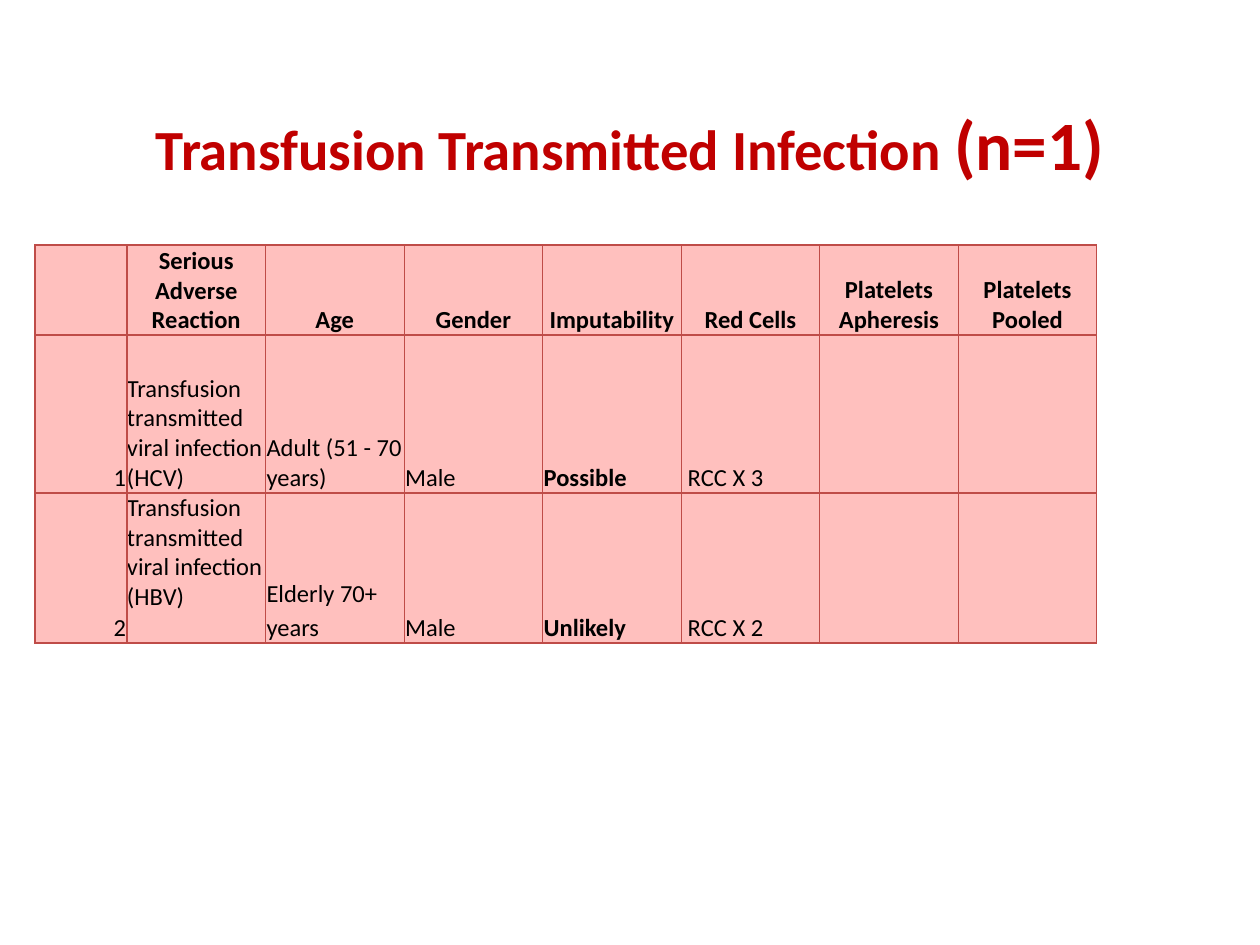
from dataclasses import dataclass
from typing import Any

from lxml.etree import SubElement
from pptx import Presentation
from pptx.dml.color import RGBColor
from pptx.enum.text import MSO_ANCHOR as Anchor, PP_ALIGN as Align
from pptx.oxml.ns import qn
from pptx.util import Pt

SCALE = 914400 / 126
RED = RGBColor(0xC0, 0x00, 0x00)
PINK = RGBColor(0xFF, 0xC0, 0xBE)
EDGE = RGBColor(0xBF, 0x4C, 0x48)
BLACK = RGBColor(0x00, 0x00, 0x00)


def emu(px):
    return round(px * SCALE)


@dataclass
class Deck:
    slide: Any
    font: str = "Calibri"
    size: float = 14

    def run(self, para, text, size=None, color=BLACK, bold=False):
        run = para.add_run()
        run.text = text
        font = run.font
        font.name, font.size, font.bold = self.font, Pt(size or self.size), bold
        font.color.rgb = color

    def title(self, box, runs, color):
        frame = self.slide.shapes.add_textbox(*map(emu, box)).text_frame
        frame.word_wrap = True
        frame.vertical_anchor = Anchor.MIDDLE
        frame.margin_top = frame.margin_bottom = 0
        para = frame.paragraphs[0]
        para.alignment = Align.CENTER
        for text, size in runs:
            self.run(para, text, size, color, True)

    def border(self, cell, color, width):
        props = cell._tc.get_or_add_tcPr()
        for side in ("lnL", "lnR", "lnT", "lnB"):
            line = SubElement(props, qn(f"a:{side}"), w=str(Pt(width)))
            fill = SubElement(line, qn("a:solidFill"))
            SubElement(fill, qn("a:srgbClr"), val=str(color))

    def cell(self, cell, text, align, bold, pad):
        self.border(cell, EDGE, 0.75)
        cell.fill.solid()
        cell.fill.fore_color.rgb = PINK
        cell.vertical_anchor = Anchor.BOTTOM
        cell.margin_left = cell.margin_right = cell.margin_top = emu(pad)
        cell.margin_bottom = 0
        para = cell.text_frame.paragraphs[0]
        para.alignment = align
        if text:
            self.run(para, text, bold=bold)

    def table(self, left, top, cols, rows, data):
        box = map(emu, (left, top, sum(cols), sum(rows)))
        table = self.slide.shapes.add_table(len(rows), len(cols), *box).table
        table.first_row = table.horz_banding = False
        for col, width in zip(table.columns, cols):
            col.width = emu(width)
        for row, height in zip(table.rows, rows):
            row.height = emu(height)
        for r, line in enumerate(data):
            for c, text in enumerate(line):
                # Centred header, numbers to the right, the rest to the left
                align = Align.CENTER if r == 0 else Align.LEFT if c else Align.RIGHT
                pad = 0 if r and c == 1 else 1
                self.cell(table.cell(r, c), text, align, r == 0 or c == 4, pad)
        return table


def main():
    prs = Presentation()
    prs.slide_width, prs.slide_height = emu(1260), emu(945)
    deck = Deck(prs.slides.add_slide(prs.slide_layouts[6]))

    # Title
    deck.title((63, 98, 1134, 90),
               [("Transfusion Transmitted Infection ", 32.4), ("(n=1)", 39.6)], RED)

    # Case table: a narrow number column, then seven equal ones
    cases = [
        ["", "Serious Adverse Reaction", "Age", "Gender", "Imputability",
         "Red Cells", "Platelets Apheresis", "Platelets Pooled"],
        ["1", "Transfusion transmitted viral infection (HCV)",
         "Adult (51 - 70 years)", "Male", "Possible", " RCC X 3", "", ""],
        ["2", "Transfusion transmitted viral infection (HBV)",
         "Elderly 70+ years", "Male", "Unlikely", " RCC X 2", "", ""],
    ]
    table = deck.table(35, 245, [92] + [970 / 7] * 7, [90, 158, 150], cases)

    # Last row: reaction sits at the top, age has wider lines
    table.cell(2, 1).vertical_anchor = Anchor.TOP
    table.cell(2, 2).text_frame.paragraphs[0].line_spacing = 1.15

    prs.save("out.pptx")


if __name__ == "__main__":
    main()
